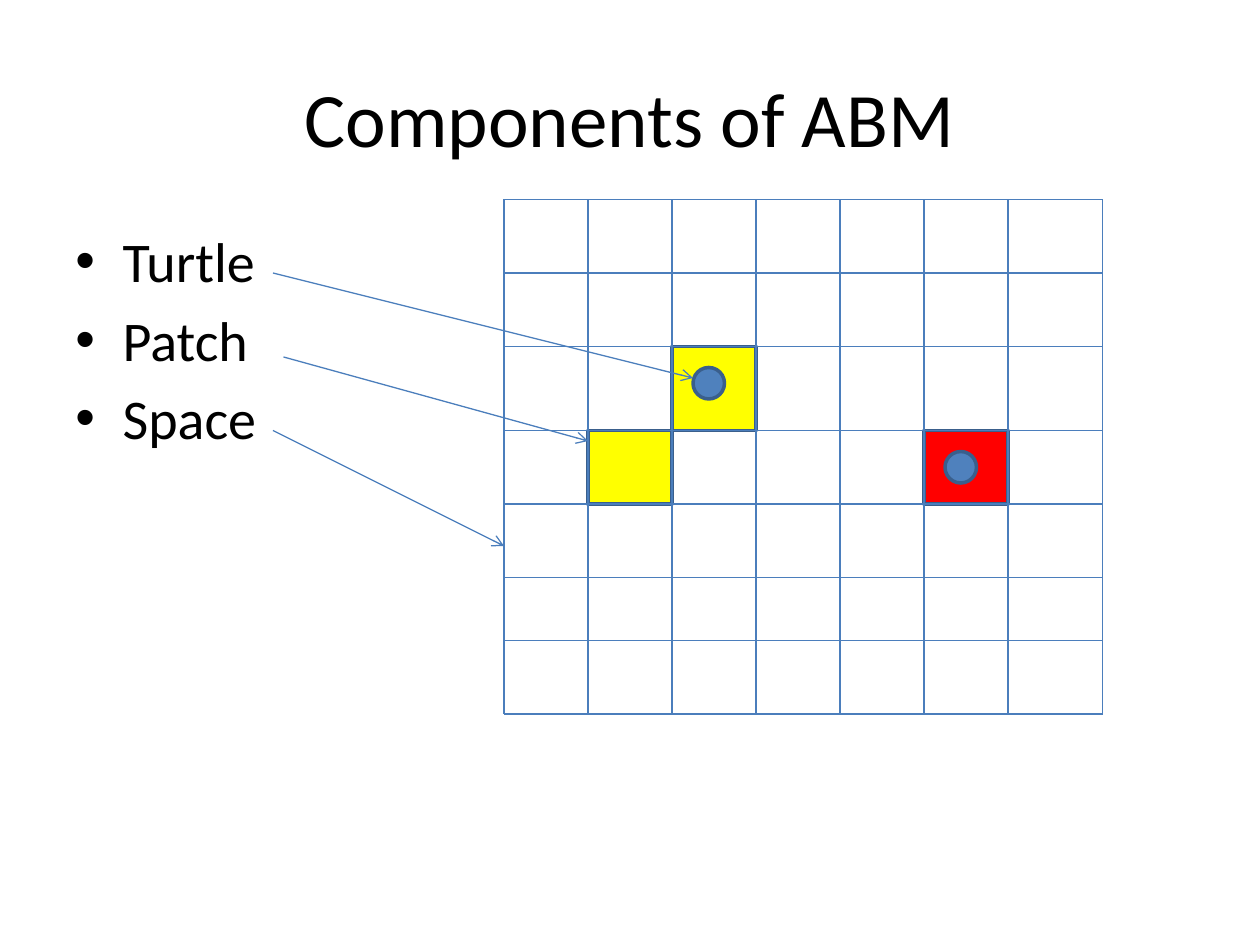
from itertools import accumulate

from lxml import etree
from pptx import Presentation
from pptx.dml.color import RGBColor
from pptx.enum.shapes import MSO_CONNECTOR, MSO_SHAPE
from pptx.enum.text import MSO_ANCHOR, PP_ALIGN
from pptx.oxml.ns import qn
from pptx.util import Pt

STRAIGHT = MSO_CONNECTOR.STRAIGHT
RECTANGLE = MSO_SHAPE.RECTANGLE
OVAL = MSO_SHAPE.OVAL
MIDDLE = MSO_ANCHOR.MIDDLE
CENTER = PP_ALIGN.CENTER
LEFT = PP_ALIGN.LEFT

FONT = "Calibri"
COLORS = {
    "text": "000000",
    "line": "4B7EBC",
    "outline": "3A5F8C",
    "turtle": "4F81BD",
    "yellow": "FFFF00",
    "red": "FF0000",
}
TITLE_LAYOUT = 5

# Grid cell sizes in points
COLUMN_WIDTHS = [48] * 6 + [54]
ROW_HEIGHTS = [42, 42, 48, 42, 42, 36, 42]
TURTLE_SIZE = 18
TURTLE_OFFSET = 12


def color(name):
    return RGBColor.from_string(COLORS[name])


def add_run(paragraph, text, size):
    run = paragraph.add_run()
    run.text = text
    run.font.name = FONT
    run.font.size = Pt(size)
    run.font.color.rgb = color("text")


def add_line(shapes, start, end, arrow=False):
    line = shapes.add_connector(STRAIGHT, *map(Pt, (*start, *end)))
    line.line.color.rgb = color("line")
    line.line.width = Pt(0.75)
    properties = line._element.spPr
    if arrow:
        outline = properties.find(qn("a:ln"))
        etree.SubElement(outline, qn("a:tailEnd"), type="arrow")
    etree.SubElement(properties, qn("a:effectLst"))


def add_figure(slide, kind, box, fill):
    shape = slide.shapes.add_shape(kind, *map(Pt, box))
    shape.shadow.inherit = False
    shape.fill.solid()
    shape.fill.fore_color.rgb = color(fill)
    shape.line.color.rgb = color("outline")
    shape.line.width = Pt(2)


def place_title(slide, box, text):
    title = slide.shapes.title
    title.left, title.top, title.width, title.height = map(Pt, box)
    frame = title.text_frame
    frame.vertical_anchor = MIDDLE
    paragraph = frame.paragraphs[0]
    paragraph.alignment = CENTER
    add_run(paragraph, text, 44)


def place_bullets(slide, box, items):
    frame = slide.shapes.add_textbox(*map(Pt, box)).text_frame
    frame.word_wrap = True
    for index, item in enumerate(items):
        paragraph = frame.add_paragraph() if index else frame.paragraphs[0]
        paragraph.alignment = LEFT
        paragraph.space_before = Pt(6.4)
        properties = paragraph._p.get_or_add_pPr()
        properties.set("marL", str(Pt(27)))
        properties.set("indent", str(-Pt(27)))
        etree.SubElement(properties, qn("a:buFont"), typeface="Arial")
        etree.SubElement(properties, qn("a:buChar"), char="•")
        add_run(paragraph, item, 32)


def place_space(slide, left, top, patches, turtles):
    xs = list(accumulate(COLUMN_WIDTHS, initial=left))
    ys = list(accumulate(ROW_HEIGHTS, initial=top))

    # Coloured patches
    for column, row, fill in patches:
        box = (xs[column], ys[row], COLUMN_WIDTHS[column], ROW_HEIGHTS[row])
        add_figure(slide, RECTANGLE, box, fill)

    # Turtles standing on patches
    for column, row in turtles:
        box = (xs[column] + TURTLE_OFFSET, ys[row] + TURTLE_OFFSET,
               TURTLE_SIZE, TURTLE_SIZE)
        add_figure(slide, OVAL, box, "turtle")

    # Grid lines
    grid = slide.shapes.add_group_shape().shapes
    for y in ys:
        add_line(grid, (xs[0], y), (xs[-1], y))
    for x in xs:
        add_line(grid, (x, ys[0]), (x, ys[-1]))


def place_arrows(slide, arrows):
    for start, end in arrows:
        add_line(slide.shapes, start, end, arrow=True)


def main():
    presentation = Presentation()
    presentation.slide_width, presentation.slide_height = Pt(720), Pt(540)
    layout = presentation.slide_layouts[TITLE_LAYOUT]
    slide = presentation.slides.add_slide(layout)

    place_title(slide, (36, 21.6, 648, 90), "Components of ABM")
    place_bullets(slide, (36, 126, 648, 356.4), ["Turtle", "Patch", "Space"])
    place_space(
        slide, 288, 114,
        patches=[(5, 3, "red"), (2, 2, "yellow"), (1, 3, "yellow")],
        turtles=[(2, 2), (5, 3)],
    )
    # From each bullet to its part of the grid
    place_arrows(slide, [
        ((156, 156), (396, 216)),
        ((162, 204), (336, 252)),
        ((156, 246), (288, 312)),
    ])
    presentation.save("out.pptx")


if __name__ == "__main__":
    main()
